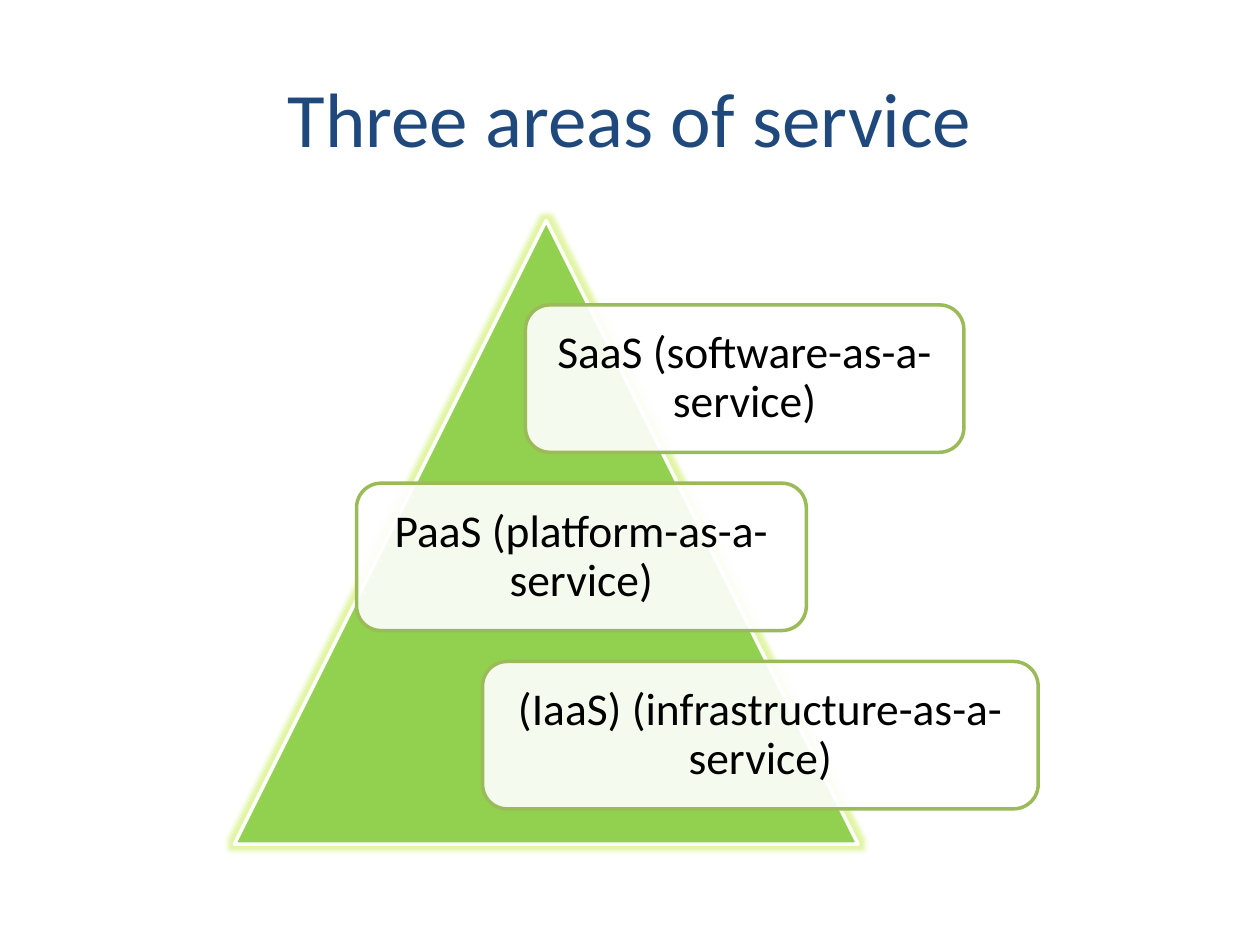
from dataclasses import dataclass

from lxml import etree
from pptx import Presentation
from pptx.dml.color import RGBColor
from pptx.enum.shapes import MSO_SHAPE
from pptx.enum.text import MSO_ANCHOR, PP_ALIGN
from pptx.oxml.ns import qn
from pptx.util import Inches, Pt

TRIANGLE = MSO_SHAPE.ISOSCELES_TRIANGLE
ROUNDED = MSO_SHAPE.ROUNDED_RECTANGLE
MIDDLE = MSO_ANCHOR.MIDDLE
CENTER = PP_ALIGN.CENTER

WIDTH, HEIGHT = 10, 7.5
PYRAMID_LEFT, PYRAMID_TOP, PYRAMID_SIZE = 1.86, 1.75, 4.95
LABEL_TOP = 2.42
LABEL_HEIGHT = 1.17
LABEL_PITCH = 1.415
LABELS = (
    ("SaaS (software-as-a-service)", 4.17, 3.48),
    ("PaaS (platform-as-a-service)", 2.83, 3.57),
    ("(IaaS) (infrastructure-as-a-service)", 3.83, 4.41),
)


@dataclass(frozen=True)
class Theme:
    """Colours, font and sizes of the slide."""
    font: str = "Calibri"
    title: str = "1F497D"
    text: str = "000000"
    pyramid: str = "92D050"
    glow: str = "B5E61D"
    border: str = "9BBB59"
    paper: str = "FFFFFF"
    title_size: int = 44
    label_size: int = 26
    line_width: int = 2
    glow_radius: int = 5


THEME = Theme()


def write(s, text, size, color, inset=0.1):
    """Put one centred paragraph into a shape."""
    tf = s.text_frame
    tf.word_wrap = True
    tf.vertical_anchor = MIDDLE
    tf.margin_left = tf.margin_right = Inches(inset)
    tf.margin_top = tf.margin_bottom = Inches(inset)
    p = tf.paragraphs[0]
    p.text = text
    p.alignment = CENTER
    p.font.name = THEME.font
    p.font.size = Pt(size)
    p.font.color.rgb = RGBColor.from_string(color)
    return p


def add_box(slide, kind, box, fill, line):
    """Add a filled, outlined shape without a shadow."""
    s = slide.shapes.add_shape(kind, *map(Inches, box))
    s.shadow.inherit = False
    s.fill.solid()
    s.fill.fore_color.rgb = RGBColor.from_string(fill)
    s.line.color.rgb = RGBColor.from_string(line)
    s.line.width = Pt(THEME.line_width)
    return s


def set_alpha(color, percent):
    """Give a colour element an opacity in percent."""
    etree.SubElement(color, qn("a:alpha")).set("val", str(percent * 1000))


def add_title(slide, text):
    """Add the slide title."""
    box = (0.05 * WIDTH, 0.04 * HEIGHT, 0.9 * WIDTH, HEIGHT / 6)
    s = slide.shapes.add_textbox(*map(Inches, box))
    write(s, text, THEME.title_size, THEME.title)


def add_pyramid(slide):
    """Add the glowing triangle."""
    box = (PYRAMID_LEFT, PYRAMID_TOP, PYRAMID_SIZE, PYRAMID_SIZE)
    s = add_box(slide, TRIANGLE, box, THEME.pyramid, THEME.paper)
    effects = s.element.spPr.find(qn("a:effectLst"))
    glow = etree.SubElement(effects, qn("a:glow"))
    glow.set("rad", str(Pt(THEME.glow_radius)))
    color = etree.SubElement(glow, qn("a:srgbClr"))
    color.set("val", THEME.glow)
    set_alpha(color, 40)


def add_label(slide, row, text, left, width):
    """Add a translucent label on a row of the pyramid."""
    box = (left, LABEL_TOP + row * LABEL_PITCH, width, LABEL_HEIGHT)
    s = add_box(slide, ROUNDED, box, THEME.paper, THEME.border)
    set_alpha(s.element.spPr.find(qn("a:solidFill"))[0], 90)
    p = write(s, text, THEME.label_size, THEME.text, inset=0.11)
    p.line_spacing = 0.9


def main():
    """Build and save the slide."""
    prs = Presentation()
    prs.slide_width, prs.slide_height = Inches(WIDTH), Inches(HEIGHT)
    slide = prs.slides.add_slide(prs.slide_layouts[6])
    add_title(slide, "Three areas of service")
    add_pyramid(slide)
    for row, label in enumerate(LABELS):
        add_label(slide, row, *label)
    prs.save("out.pptx")


if __name__ == "__main__":
    main()
